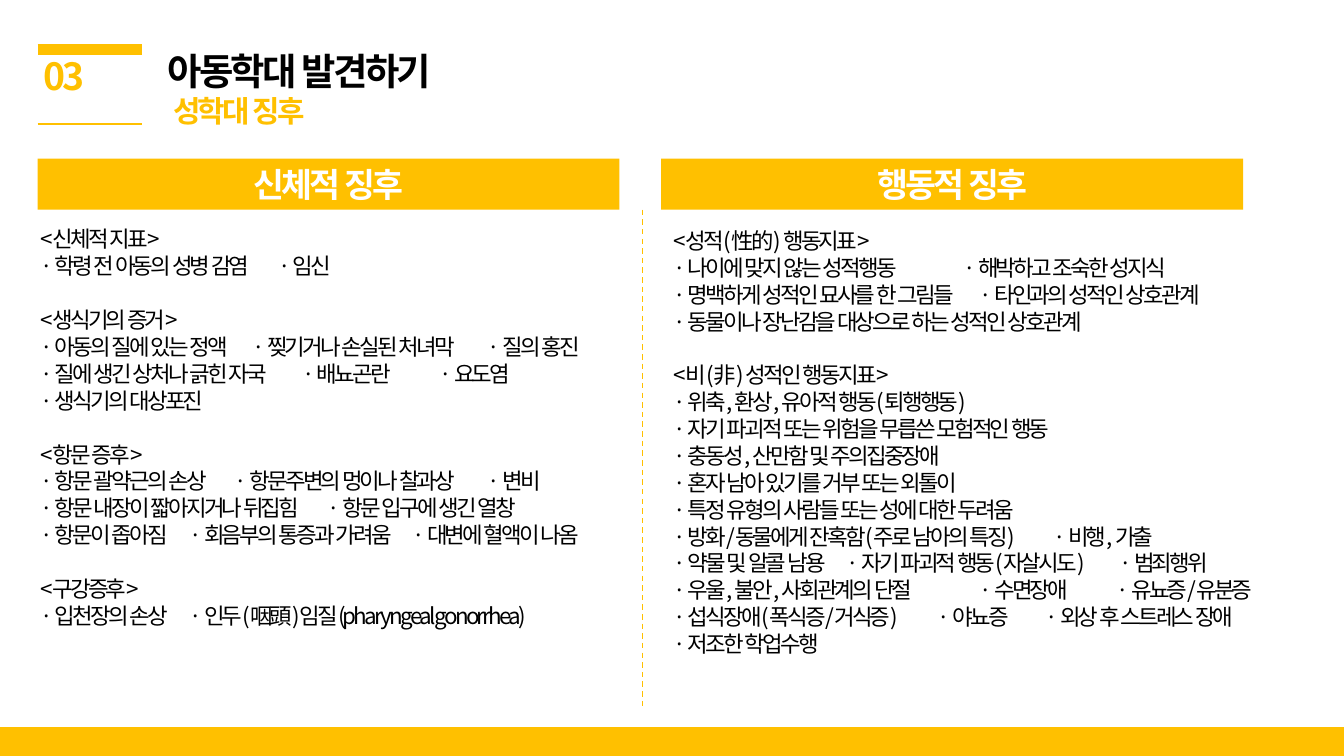
from dataclasses import dataclass

from pptx import Presentation
from pptx.dml.color import RGBColor
from pptx.enum.dml import MSO_LINE
from pptx.enum.lang import MSO_LANGUAGE_ID
from pptx.enum.shapes import MSO_CONNECTOR, MSO_SHAPE
from pptx.enum.text import MSO_ANCHOR, PP_ALIGN
from pptx.oxml.ns import qn
from pptx.util import Inches, Pt

STRAIGHT = MSO_CONNECTOR.STRAIGHT
RECTANGLE = MSO_SHAPE.RECTANGLE
DASH = MSO_LINE.DASH
KOREAN = MSO_LANGUAGE_ID.KOREAN
MIDDLE = MSO_ANCHOR.MIDDLE
CENTER, LEFT = PP_ALIGN.CENTER, PP_ALIGN.LEFT


@dataclass(frozen=True)
class Theme:
    """Colours, font and type sizes of the slide."""
    accent: RGBColor = RGBColor(0xFF, 0xC0, 0x00)
    ink: RGBColor = RGBColor(0, 0, 0)
    paper: RGBColor = RGBColor(0xFF, 0xFF, 0xFF)
    font: str = "Noto Sans CJK KR"
    title: int = 20
    subtitle: int = 16
    header: int = 18
    body: int = 12
    group_gap: float = 14.4
    tracking: int = -150


THEME = Theme()

PHYSICAL_SIGNS = [
    [("<신체적 지표>", []),
     ("· 학령 전 아동의 성병 감염\t· 임신", [1.77])],
    [("<생식기의 증거>", []),
     ("· 아동의 질에 있는 정액\t· 찢기거나 손실된 처녀막\t· 질의 홍진", [1.58, 3.33]),
     ("· 질에 생긴 상처나 긁힌 자국\t· 배뇨곤란\t· 요도염", [1.95, 2.97]),
     ("· 생식기의 대상포진", [])],
    [("<항문 증후>", []),
     ("· 항문 괄약근의 손상\t· 항문주변의 멍이나 찰과상\t· 변비", [1.45, 3.33]),
     ("· 항문 내장이 짧아지거나 뒤집힘\t· 항문 입구에 생긴 열창", [2.14]),
     ("· 항문이 좁아짐\t· 회음부의 통증과 가려움\t· 대변에 혈액이 나옴", [1.11, 2.77])],
    [("<구강증후>", []),
     ("· 입천장의 손상\t· 인두(咽頭)임질(pharyngeal gonorrhea)", [1.11])],
]

BEHAVIOURAL_SIGNS = [
    [("<성적(性的) 행동지표>", []),
     ("· 나이에 맞지 않는 성적행동\t· 해박하고 조숙한 성지식", [2.16]),
     ("· 명백하게 성적인 묘사를 한 그림들\t· 타인과의 성적인 상호관계", [2.28]),
     ("· 동물이나 장난감을 대상으로 하는 성적인 상호관계", [])],
    [("<비(非) 성적인 행동지표>", []),
     ("· 위축, 환상, 유아적 행동(퇴행행동)", []),
     ("· 자기 파괴적 또는 위험을 무릅쓴 모험적인 행동", []),
     ("· 충동성, 산만함 및 주의집중장애", []),
     ("· 혼자 남아 있기를 거부 또는 외톨이", []),
     ("· 특정 유형의 사람들 또는 성에 대한 두려움", []),
     ("· 방화/동물에게 잔혹함(주로 남아의 특징)\t· 비행, 가출", [2.83]),
     ("· 약물 및 알콜 남용\t· 자기 파괴적 행동(자살시도)\t· 범죄행위", [1.29, 3.32]),
     ("· 우울, 불안, 사회관계의 단절\t· 수면장애\t· 유뇨증/유분증", [2.28, 3.3]),
     ("· 섭식장애(폭식증/거식증)\t· 야뇨증\t· 외상 후 스트레스 장애", [1.97, 2.77]),
     ("· 저조한 학업수행", [])],
]


def style_paragraph(paragraph, size, color, bold=False, align=LEFT):
    """Apply the tight type style to every run of a paragraph."""
    paragraph.alignment = align
    for run in paragraph.runs:
        run.font.name = THEME.font
        run.font.size = Pt(size)
        run.font.bold = bold
        run.font.color.rgb = color
        run.font.language_id = KOREAN
        properties = run.font._element
        properties.set("spc", str(THEME.tracking))
        east_asian = properties.makeelement(qn("a:ea"), {"typeface": THEME.font})
        properties.find(qn("a:latin")).addnext(east_asian)


def add_tab_stops(paragraph, stops):
    """Set left tab stops, given in inches, on a paragraph."""
    properties = paragraph._p.get_or_add_pPr()
    tabs = properties.makeelement(qn("a:tabLst"), {})
    for stop in stops:
        tab = tabs.makeelement(qn("a:tab"), {"pos": str(Inches(stop)), "algn": "l"})
        tabs.append(tab)
    properties.append(tabs)


def add_rule(slide, start, end, weight, dash=None):
    """Draw an accent line between two points."""
    rule = slide.shapes.add_connector(
        STRAIGHT, *(Inches(value) for value in (*start, *end)))
    rule.line.color.rgb = THEME.accent
    rule.line.width = Pt(weight)
    if dash:
        rule.line.dash_style = dash
    properties = rule._element.spPr
    properties.append(properties.makeelement(qn("a:effectLst"), {}))


def add_bar(slide, left, top, width, height):
    """Add a plain accent rectangle."""
    bar = slide.shapes.add_shape(
        RECTANGLE, *(Inches(value) for value in (left, top, width, height)))
    bar.shadow.inherit = False
    bar.fill.solid()
    bar.fill.fore_color.rgb = THEME.accent
    bar.line.fill.background()
    return bar


def add_column_header(slide, left, label):
    """Add a filled column heading."""
    frame = add_bar(slide, left, 1.18, 4.33, 0.38).text_frame
    frame.margin_top = frame.margin_bottom = Inches(0.04)
    frame.vertical_anchor = MIDDLE
    frame.text = label
    style_paragraph(frame.paragraphs[0], THEME.header, THEME.paper, True, CENTER)


def add_text_area(slide, left, top, width, height):
    """Add a wrapping text box and return its frame."""
    area = slide.shapes.add_textbox(
        *(Inches(value) for value in (left, top, width, height)))
    area.text_frame.word_wrap = True
    return area.text_frame


def add_signs(slide, left, top, height, groups):
    """Add grouped signs with a gap before each later group."""
    frame = add_text_area(slide, left, top, 4.52, height)
    lines = [(text, stops, number > 0 and position == 0)
             for number, group in enumerate(groups)
             for position, (text, stops) in enumerate(group)]
    frame.text = "\n".join(text for text, _, _ in lines)
    for paragraph, (_, stops, opens_group) in zip(frame.paragraphs, lines):
        if opens_group:
            paragraph.space_before = Pt(THEME.group_gap)
        if stops:
            add_tab_stops(paragraph, stops)
        style_paragraph(paragraph, THEME.body, THEME.ink)


def add_title(slide):
    """Add the section number, title and subtitle."""
    title = add_text_area(slide, 1.15, 0.31, 7.17, 0.71)
    title.text = "아동학대 발견하기\n 성학대 징후"
    heading, subtitle = title.paragraphs
    style_paragraph(heading, THEME.title, THEME.ink, True)
    style_paragraph(subtitle, THEME.subtitle, THEME.accent, True)
    number = add_text_area(slide, 0.04, 0.35, 0.87, 0.44)
    number.text = "03"
    style_paragraph(number.paragraphs[0], THEME.title, THEME.accent, True, CENTER)


def main():
    """Build and save the slide."""
    deck = Presentation()
    deck.slide_width = Inches(10)
    deck.slide_height = deck.slide_width * 9 // 16
    slide = deck.slides.add_slide(deck.slide_layouts[6])
    add_rule(slide, (0.28, 0.37), (1.06, 0.37), 6)
    add_rule(slide, (0.28, 0.92), (1.06, 0.92), 1)
    add_bar(slide, 0, 5.41, 10, 0.22)
    add_title(slide)
    add_signs(slide, 0.2, 1.63, 3.13, PHYSICAL_SIGNS)
    add_column_header(slide, 0.28, "신체적 징후")
    add_rule(slide, (4.78, 1.56), (4.78, 5.25), 0.75, DASH)
    add_column_header(slide, 4.92, "행동적 징후")
    add_signs(slide, 4.91, 1.64, 3.33, BEHAVIOURAL_SIGNS)
    deck.save("out.pptx")


if __name__ == "__main__":
    main()
